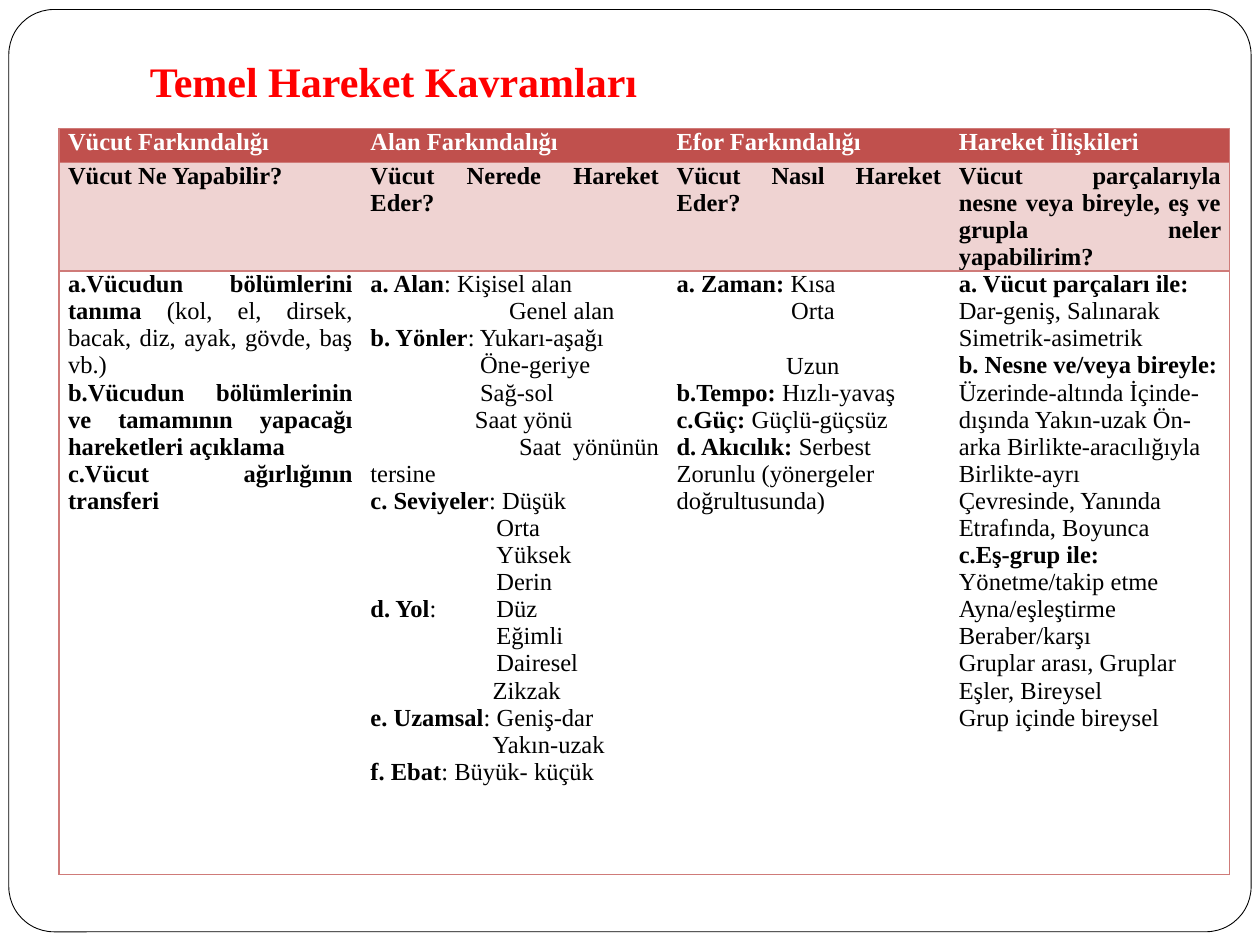
from lxml import etree
from pptx import Presentation
from pptx import util as u
from pptx.dml.color import RGBColor
from pptx.enum import shapes, text
from pptx.oxml.ns import qn

COLORS = {"ink": "000000", "paper": "FFFFFF", "title": "FF0000",
          "header": "C0504D", "question": "EFD3D2", "border": "CF7B79"}
WIDTHS = [2.4, 2.43, 2.24, 2.22]
HEIGHTS = [0.27, 0.8, 4.79]
HEADERS = ["Vücut Farkındalığı", "Alan Farkındalığı", "Efor Farkındalığı", "Hareket İlişkileri"]
QUESTIONS = ["Vücut Ne Yapabilir?", "Vücut Nerede Hareket Eder?", "Vücut Nasıl Hareket Eder?",
             "Vücut parçalarıyla nesne veya bireyle, eş ve grupla neler yapabilirim?"]

# A line is "bold lead|regular text", or (text, first-line indent in inches, space after in points)
BODY = ["a.Vücudun bölümlerini tanıma |(kol, el, dirsek, bacak, diz, ayak, gövde, baş vb.)",
        "b.Vücudun bölümlerinin ve tamamının yapacağı hareketleri açıklama|",
        "c.Vücut ağırlığının transferi|"]
SPACE = ["a. Alan|: Kişisel alan", ("Genel alan", 1.1),
         "b. Yönler|: Yukarı-aşağı", ("Öne-geriye", 0.87), ("Sağ-sol", 0.87),
         ("Saat yönü", 0.83), ("Saat yönünün tersine", 1.18),
         "c. Seviyeler|: Düşük", ("Orta", 1), ("Yüksek", 1), ("Derin", 1),
         "d. Yol|: \tDüz", ("Eğimli", 1), ("Dairesel", 1), ("Zikzak", 0.97),
         "e. Uzamsal|: Geniş-dar", ("Yakın-uzak", 0.97),
         "f. Ebat|: Büyük- küçük"]
EFFORT = ["a. Zaman: |Kısa", ("Orta", 0.91, 15.5), ("Uzun", 0.87),
          "b.Tempo: |Hızlı-yavaş", "c.Güç: |Güçlü-güçsüz", "d. Akıcılık: |Serbest",
          "Zorunlu (yönergeler", "doğrultusunda)"]
RELATIONS = ["a. Vücut parçaları ile: |Dar-geniş, Salınarak Simetrik-asimetrik",
             "b. Nesne ve/veya bireyle: |Üzerinde-altında İçinde-dışında Yakın-uzak Ön-arka "
             "Birlikte-aracılığıyla Birlikte-ayrı",
             "Çevresinde, Yanında", "Etrafında, Boyunca",
             "c.Eş-grup ile: |Yönetme/takip etme", "Ayna/eşleştirme", "Beraber/karşı",
             "Gruplar arası, Gruplar", "Eşler, Bireysel", "Grup içinde bireysel"]


def rgb(name):
    return RGBColor.from_string(COLORS[name])


class Page:
    """Style and current slide; places are shares of the slide's size."""
    font = "Times New Roman"

    def __init__(self, deck):
        self.size = (deck.slide_width, deck.slide_height) * 2
        self.slide = deck.slides.add_slide(deck.slide_layouts[6])

    def place(self, *shares):
        return [int(share * side) for share, side in zip(shares, self.size)]

    def set_line(self, paragraph, line, size, color, align):
        """Fill a paragraph: words before a bar are bold; indent and gap are optional."""
        words, indent, gap = (line, 0, 0) if isinstance(line, str) else (*line, 0)[:3]
        lead, bar, rest = words.partition("|")
        parts = [(lead, True), (rest, False)] if bar else [(lead, False)]
        paragraph.alignment = align
        if indent:
            paragraph._p.get_or_add_pPr().set("indent", str(u.Inches(indent)))
        if gap:
            paragraph.space_after = u.Pt(gap)
        for part, bold in parts:
            if part:
                run = paragraph.add_run()
                run.text = part
                run.font.name, run.font.size, run.font.bold = self.font, u.Pt(size), bold
                run.font.color.rgb = rgb(color)

    def frame(self, *shares):
        border = self.slide.shapes.add_shape(
            shapes.MSO_SHAPE.ROUNDED_RECTANGLE, *self.place(*shares))
        border.adjustments[0] = 0.049
        border.shadow.inherit = False
        border.fill.solid()
        border.fill.fore_color.rgb = rgb("paper")
        border.line.color.rgb = rgb("ink")
        border.line.width = u.Pt(0.5)

    def title(self, words, *shares):
        heading = self.slide.shapes.add_textbox(*self.place(*shares)).text_frame
        heading.word_wrap = True
        heading.auto_size = text.MSO_AUTO_SIZE.SHAPE_TO_FIT_TEXT
        self.set_line(heading.paragraphs[0], words + "|", 24, "title", text.PP_ALIGN.LEFT)

    def table(self, *shares):
        grid = self.slide.shapes.add_table(
            len(HEIGHTS), len(WIDTHS), *self.place(*shares)).table
        grid.first_row = grid.horz_banding = False
        for column, width in zip(grid.columns, WIDTHS):
            column.width = u.Inches(width)
        for row, height in zip(grid.rows, HEIGHTS):
            row.height = u.Inches(height)
        return grid

    def cell(self, cell, lines, fill, color, align, sides):
        cell.margin_left = cell.margin_right = u.Inches(0.07)
        cell.margin_top = cell.margin_bottom = 0
        frame = cell.text_frame
        for number, line in enumerate(lines):
            paragraph = frame.add_paragraph() if number else frame.paragraphs[0]
            self.set_line(paragraph, line, 14, color, align)
        self.borders(cell, sides)
        if fill:
            cell.fill.solid()
            cell.fill.fore_color.rgb = rgb(fill)
        else:
            cell.fill.background()

    def borders(self, cell, sides):
        """Rule the given sides and clear the others."""
        properties = cell._tc.get_or_add_tcPr()
        for side in "LRTB":
            line = etree.SubElement(properties, qn("a:ln" + side), w=str(u.Pt(1)))
            if side in sides:
                solid = etree.SubElement(line, qn("a:solidFill"))
                etree.SubElement(solid, qn("a:srgbClr"), val=COLORS["border"])
            else:
                etree.SubElement(line, qn("a:noFill"))


def main():
    deck = Presentation()
    deck.slide_width, deck.slide_height = u.Inches(10), u.Inches(7.5)
    page = Page(deck)
    page.frame(0.007, 0.01, 0.986, 0.976)
    concepts = page.table(0.047, 0.136, 0.93, 0.78)
    left, justified = text.PP_ALIGN.LEFT, text.PP_ALIGN.JUSTIFY
    last = len(WIDTHS) - 1
    columns = zip(HEADERS, QUESTIONS, [BODY, SPACE, EFFORT, RELATIONS])
    for number, (header, question, details) in enumerate(columns):
        sides = "TB" + ("L" if number == 0 else "R" if number == last else "")
        detail_align = left if number == last else justified
        rows = [([header + "|"], "header", "paper", left),
                ([question + "|"], "question", "ink", justified),
                (details, None, "ink", detail_align)]
        for row, content in enumerate(rows):
            page.cell(concepts.cell(row, number), *content, sides)
    page.title("Temel Hareket Kavramları", 0.109, 0.052, 0.719, 0.068)
    deck.save("out.pptx")


if __name__ == "__main__":
    main()
